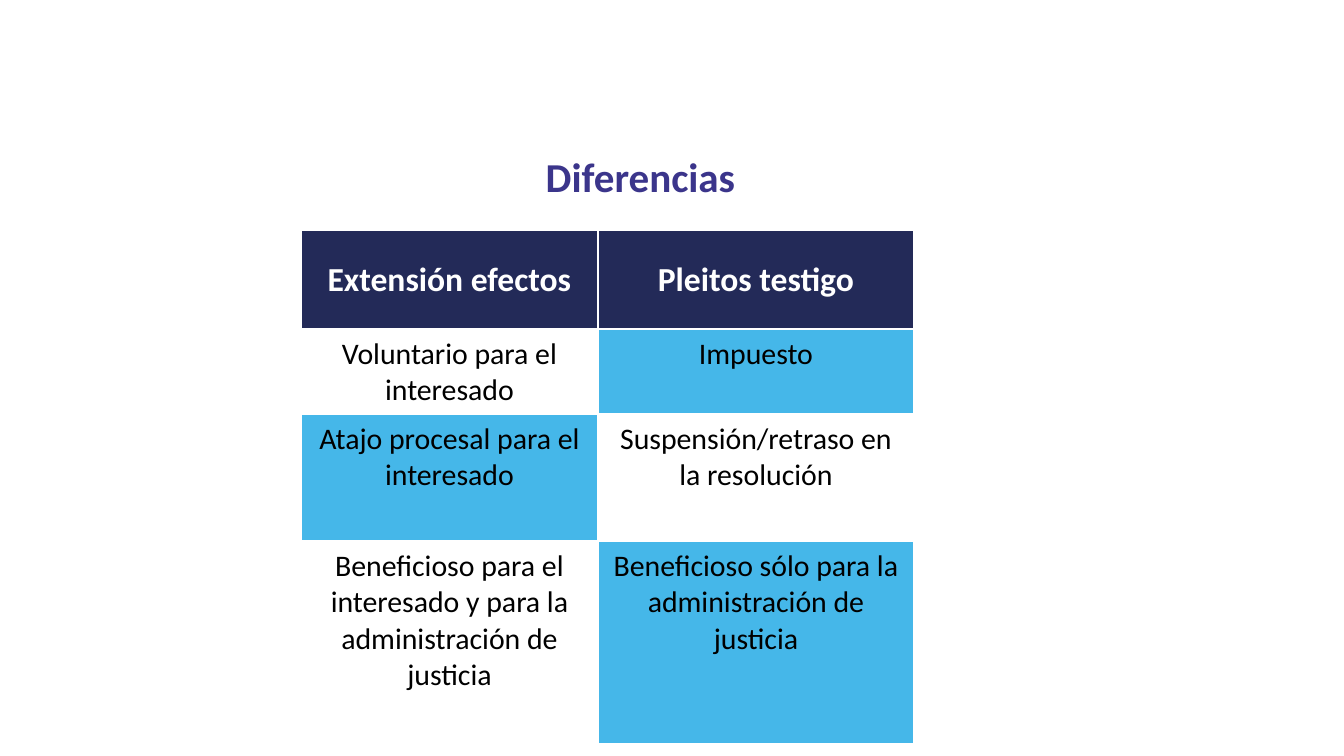
from lxml.etree import SubElement
from pptx import Presentation
from pptx.dml.color import RGBColor
from pptx.enum.text import MSO_ANCHOR as Anchor, MSO_AUTO_SIZE as AutoSize, PP_ALIGN as Align
from pptx.oxml.ns import qn
from pptx.util import Pt

PX = 914400 / 134.4
NAVY, SKY, WHITE = "232A58", "45B7E9", "FFFFFF"


def px(length):
    return round(length * PX)


def write(frame, text, size, color, bold=False):
    frame.word_wrap = True
    para = frame.paragraphs[0]
    para.alignment = Align.CENTER
    span = para.add_run()
    span.text = text
    span.font.name = "Calibri"
    span.font.size = Pt(size)
    span.font.bold = bold
    span.font.color.rgb = RGBColor.from_string(color)


deck = Presentation()
deck.slide_width, deck.slide_height = px(1344), px(756)
page = deck.slides.add_slide(deck.slide_layouts[6])

title = page.shapes.add_textbox(px(85), px(145), px(1120), px(63))
write(title.text_frame, "Diferencias ", size=22, color="3B358B", bold=True)
title.text_frame.auto_size = AutoSize.SHAPE_TO_FIT_TEXT

rows = [
    ("Extensión efectos", "Pleitos testigo"),
    ("Voluntario para el interesado", "Impuesto"),
    ("Atajo procesal para el interesado", "Suspensión/retraso en la resolución"),
    ("Beneficioso para el interesado y para la administración de justicia",
     "Beneficioso sólo para la administración de justicia"),
]
widths = [297, 316]
heights = [99, 79, 127, 203]
table = page.shapes.add_table(len(rows), len(widths), px(301), px(230),
                              px(sum(widths)), px(sum(heights))).table
for column, width in zip(table.columns, widths):
    column.width = px(width)
for row, height in zip(table.rows, heights):
    row.height = px(height)

for r, texts in enumerate(rows):
    header = r == 0
    for c, text in enumerate(texts):
        cell = table.cell(r, c)
        write(cell.text_frame, text, size=18 if header else 16,
              color=WHITE if header else "000000", bold=header)
        cell.vertical_anchor = Anchor.MIDDLE if header else Anchor.TOP
        for side in ("lnL", "lnR", "lnT", "lnB"):
            line = SubElement(cell._tc.get_or_add_tcPr(), qn(f"a:{side}"), w=str(Pt(1)))
            SubElement(SubElement(line, qn("a:solidFill")), qn("a:srgbClr"), val=WHITE)
        # Body cells alternate like a chessboard
        fill = NAVY if header else SKY if (r + c) % 2 == 0 else WHITE
        cell.fill.solid()
        cell.fill.fore_color.rgb = RGBColor.from_string(fill)

deck.save("out.pptx")
